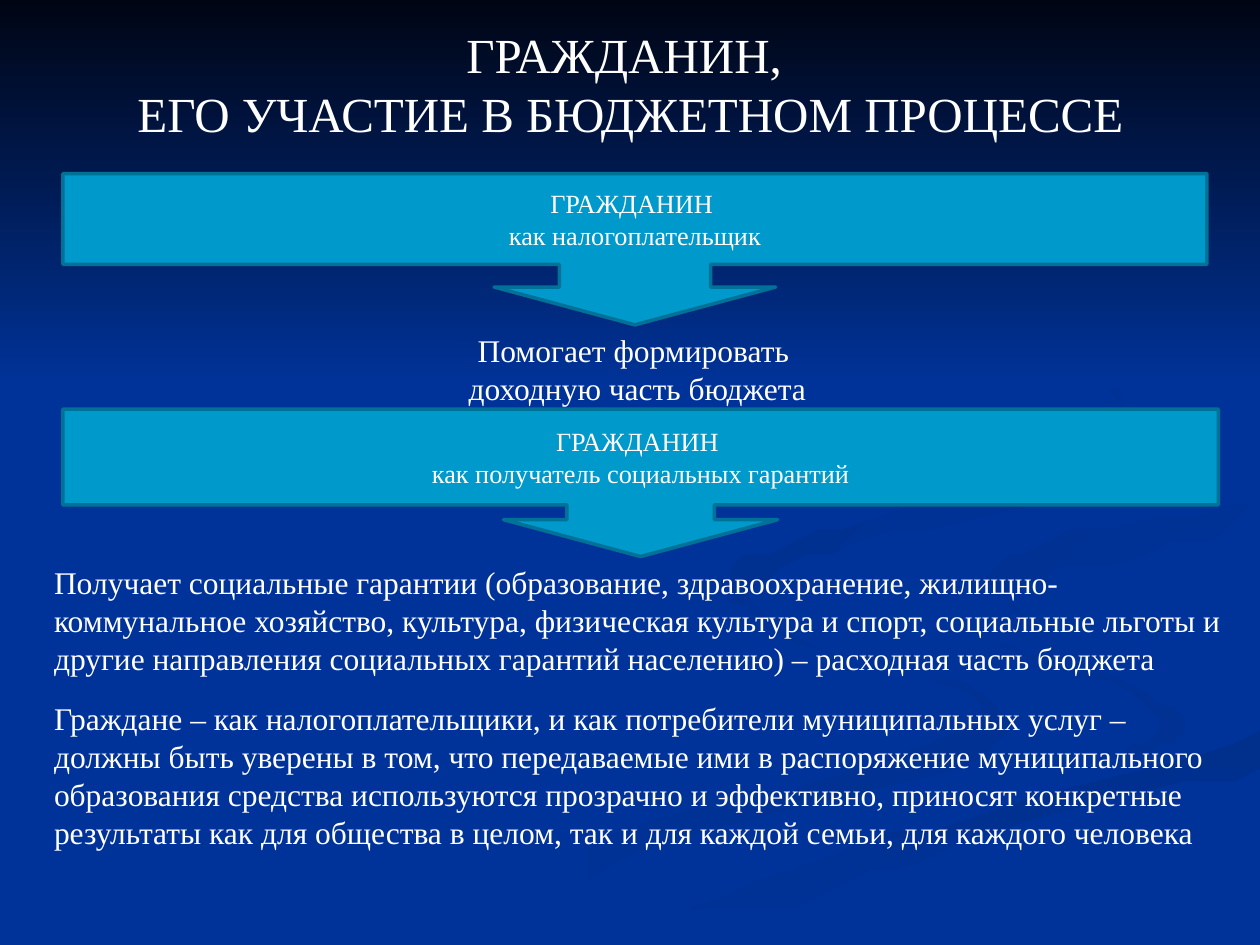
import pptx
import pptx.util
import pptx.dml.color
import pptx.enum.shapes
import pptx.enum.text

Cm = pptx.util.Cm
RGB = pptx.dml.color.RGBColor
SHAPE = pptx.enum.shapes.MSO_SHAPE
ALIGN = pptx.enum.text.PP_ALIGN
ANCHOR = pptx.enum.text.MSO_ANCHOR

NAVY = RGB(0x00, 0x33, 0x99)
RIBBON = RGB(0x00, 0x31, 0x93)
RIBBON_DARK = RGB(0x00, 0x2F, 0x8C)
NIGHT = RGB(0x00, 0x05, 0x14)
CYAN = RGB(0x00, 0x99, 0xCC)
TEAL = RGB(0x00, 0x71, 0x97)
WHITE = RGB(0xFF, 0xFF, 0xFF)
FONT = "Times New Roman"
GRID = Cm(0.254)

# Background ribbons: start colour, end colour, angle, two edges on the grid
RIBBONS = [
    (NAVY, RIBBON, 0,
     [(57, 46), (61, 50), (78, 56), (65, 62), (46, 67), (30, 75)],
     [(36, 75), (56, 66), (78, 60), (78, 55), (64, 51), (57, 46)]),
    (NAVY, RIBBON, 315,
     [(72, 46), (77, 50), (91, 55), (94, 58), (89, 60)],
     [(89, 60), (92, 57), (82, 52), (74, 49), (72, 46)]),
    (RIBBON_DARK, NAVY, 270,
     [(50, 75), (63, 69), (80, 64), (100, 58)],
     [(100, 61), (79, 66), (65, 71), (57, 75)]),
    (RIBBON, NAVY, 315,
     [(78, 46), (83, 43), (100, 40)],
     [(100, 42), (86, 45), (80, 47), (83, 50)]),
    (RIBBON_DARK, NAVY, 315,
     [(76, 23), (87, 30), (88, 36), (70, 41), (58, 45), (62, 50)],
     [(62, 50), (59, 47), (68, 43), (87, 38), (88, 30), (76, 23)]),
]


def place(shape, left, top, width, height):
    shape.left, shape.top = Cm(left), Cm(top)
    shape.width, shape.height = Cm(width), Cm(height)


def write(shape, text, size=18, align=ALIGN.LEFT, anchor=ANCHOR.TOP):
    """Fill a shape with text, one paragraph per line."""
    frame = shape.text_frame
    frame.word_wrap = True
    frame.auto_size = pptx.enum.text.MSO_AUTO_SIZE.NONE
    frame.vertical_anchor = anchor
    frame.text = text
    for paragraph in frame.paragraphs:
        paragraph.alignment = align
        font = paragraph.runs[0].font
        font.name, font.size = FONT, pptx.util.Pt(size)
        font.color.rgb = WHITE


def smooth(edge, steps=6):
    """Catmull-Rom curve through the points of an edge."""
    padded = [edge[0], *edge, edge[-1]]
    curve = []
    for a, b, c, d in zip(padded, padded[1:], padded[2:], padded[3:]):
        for step in range(steps):
            t = step / steps
            curve.append(tuple(
                q + t * ((r - p) + t * ((2 * p - 5 * q + 4 * r - s)
                                        + t * (3 * q - p - 3 * r + s))) / 2
                for p, q, r, s in zip(a, b, c, d)))
    return curve + [edge[-1]]


def paint_gradient(shape, start, end, angle):
    shape.shadow.inherit = False
    shape.line.fill.background()
    shape.fill.gradient()
    shape.fill.gradient_angle = angle
    for stop, color in zip(shape.fill.gradient_stops, (start, end)):
        stop.color.rgb = color


def add_ribbon(slide, start, end, angle, near_edge, far_edge):
    outline = smooth(near_edge) + smooth(far_edge)
    builder = slide.shapes.build_freeform(*outline[0], scale=GRID)
    builder.add_line_segments(outline[1:], close=True)
    paint_gradient(builder.convert_to_shape(), start, end, angle)


def add_text(slide, text, left, top, width, height, **style):
    box = slide.shapes.add_textbox(Cm(left), Cm(top), Cm(width), Cm(height))
    write(box, text, **style)


def add_callout(slide, text, top, width, height, body_share):
    callout = slide.shapes.add_shape(
        SHAPE.DOWN_ARROW_CALLOUT, Cm(1.27), Cm(top), Cm(width), Cm(height))
    for index, value in enumerate((1.0, 0.93, 0.25, body_share)):
        callout.adjustments[index] = value
    callout.shadow.inherit = False
    callout.fill.solid()
    callout.fill.fore_color.rgb = CYAN
    callout.line.color.rgb = TEAL
    callout.line.width = pptx.util.Pt(2)
    write(callout, text, size=15, align=ALIGN.CENTER, anchor=ANCHOR.MIDDLE)


def main():
    deck = pptx.Presentation()
    deck.slide_width, deck.slide_height = Cm(25.4), Cm(19.05)
    slide = deck.slides.add_slide(deck.slide_layouts[5])

    # Background with ribbons and a dark sky
    slide.background.fill.solid()
    slide.background.fill.fore_color.rgb = NAVY
    for ribbon in RIBBONS:
        add_ribbon(slide, *ribbon)
    sky = slide.shapes.add_shape(SHAPE.RECTANGLE, 0, 0, deck.slide_width, Cm(7.82))
    paint_gradient(sky, NIGHT, NAVY, 270)

    # Title, brought in front of the background
    title = slide.shapes.title
    slide.shapes._spTree.append(title._element)
    place(title, 0.64, 0.36, 24.13, 2.64)
    write(title, "ГРАЖДАНИН, \nЕГО УЧАСТИЕ В БЮДЖЕТНОМ ПРОЦЕССЕ",
          size=28, align=ALIGN.CENTER)

    # Citizen as taxpayer
    add_text(slide, "Помогает формировать \nдоходную часть бюджета",
             6.78, 6.55, 12.14, 1.8, align=ALIGN.CENTER)
    add_callout(slide, "ГРАЖДАНИН \nкак налогоплательщик", 3.5, 23.06, 3.05, 0.6)

    # Citizen as recipient of social guarantees
    add_text(slide, "Получает социальные гарантии (образование, здравоохранение, "
             "жилищно-коммунальное хозяйство, культура, физическая культура и спорт, "
             "социальные льготы и другие направления социальных гарантий населению) "
             "– расходная часть бюджета", 0.84, 11.23, 24.13, 2.57)
    add_callout(slide, "ГРАЖДАНИН \nкак получатель социальных гарантий",
                8.25, 23.29, 2.97, 0.65)

    # Conclusion
    add_text(slide, "Граждане – как налогоплательщики, и как потребители "
             "муниципальных услуг – должны быть уверены в том, что передаваемые ими "
             "в распоряжение муниципального образования средства используются "
             "прозрачно и эффективно, приносят конкретные результаты как для общества "
             "в целом, так и для каждой семьи, для каждого человека",
             0.84, 13.97, 23.7, 3.33)

    deck.save("out.pptx")


if __name__ == "__main__":
    main()
